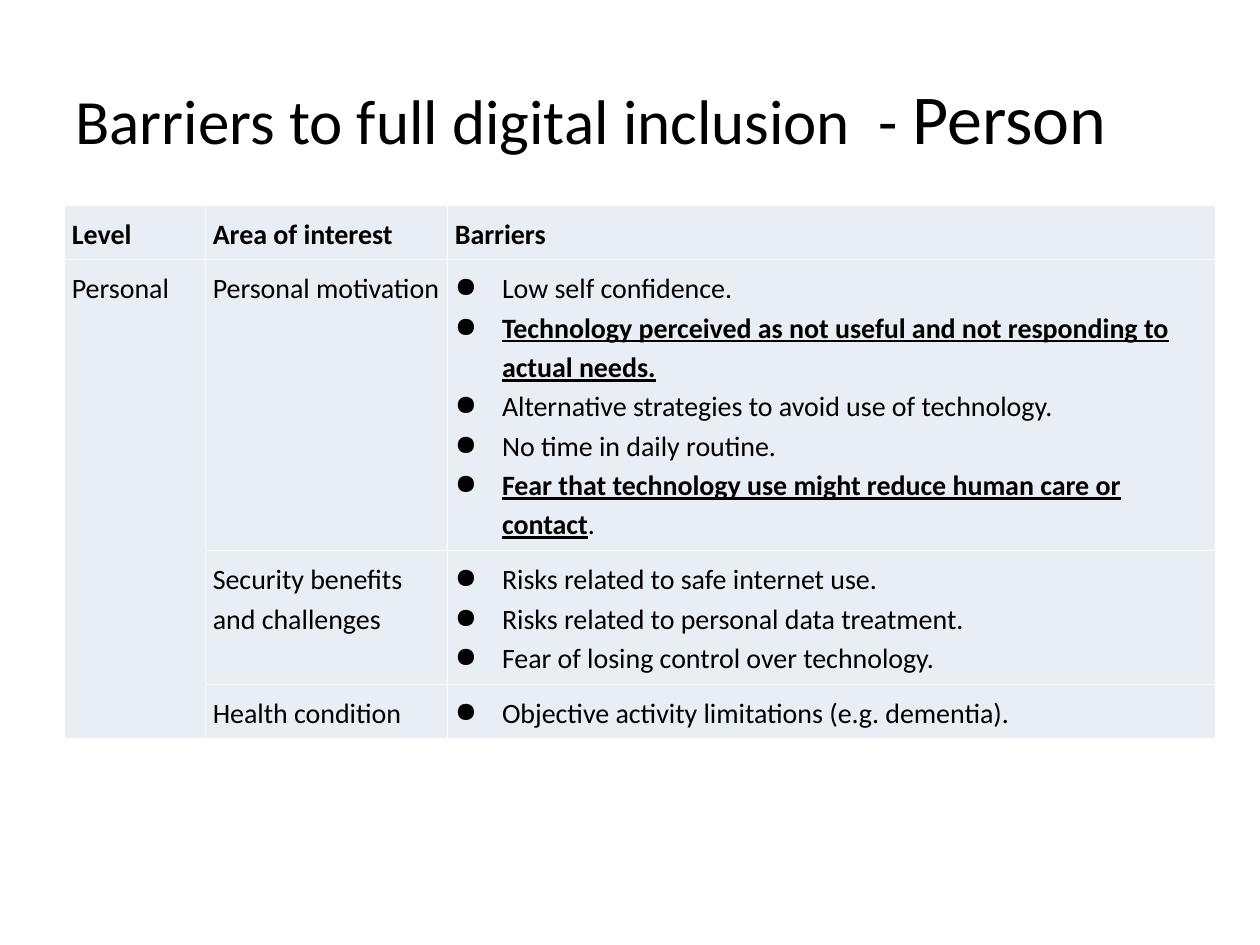
import dataclasses
import typing

import lxml.etree
import pptx
import pptx.dml.color
import pptx.enum.text
import pptx.oxml.ns
import pptx.util

Cm = pptx.util.Cm
qn = pptx.oxml.ns.qn
INK, PALE, WHITE = "000000", "E9EDF4", "FFFFFF"


@dataclasses.dataclass
class Item:
    text: str
    strong: bool = False
    tail: str = ""


@dataclasses.dataclass
class Row:
    high: float
    level: str
    area: str
    items: typing.List[Item]


ROWS = [
    Row(1.1, "Level", "Area of interest", [Item("Barriers")]),
    Row(5.87, "Personal", "Personal motivation", [
        Item("Low self confidence."),
        Item("Technology perceived as not useful and not responding to actual needs.", True),
        Item("Alternative strategies to avoid use of technology."),
        Item("No time in daily routine."),
        Item("Fear that technology use might reduce human care or contact", True, "."),
    ]),
    Row(2.7, "", "Security benefits and challenges", [
        Item("Risks related to safe internet use."),
        Item("Risks related to personal data treatment."),
        Item("Fear of losing control over technology."),
    ]),
    Row(1.1, "", "Health condition", [Item("Objective activity limitations (e.g. dementia).")]),
]
WIDTHS = [2.84, 4.88, 15.49]


def tint(code: str) -> pptx.dml.color.RGBColor:
    return pptx.dml.color.RGBColor.from_string(code)


def style(run, size: float, bold: bool = False, under: bool = False) -> None:
    font = run.font
    font.name = "Calibri"
    font.size = pptx.util.Pt(size)
    font.bold = bold
    font.underline = under
    font.color.rgb = tint(INK)


def bullet(para) -> None:
    props = para._p.get_or_add_pPr()
    props.set("marL", str(Cm(0.95)))
    props.set("indent", str(-Cm(0.95)))
    lxml.etree.SubElement(props, qn("a:buChar")).set("char", "●")


def border(cell) -> None:
    props = cell._tc.get_or_add_tcPr()
    for spot, side in enumerate(("lnL", "lnR", "lnT", "lnB")):
        line = lxml.etree.Element(qn("a:" + side), w=str(pptx.util.Pt(1)))
        fill = lxml.etree.SubElement(line, qn("a:solidFill"))
        lxml.etree.SubElement(fill, qn("a:srgbClr")).set("val", WHITE)
        props.insert(spot, line)


def write(cell, items: typing.List[Item], head: bool, dots: bool) -> None:
    cell.margin_left = cell.margin_right = Cm(0.15)
    cell.margin_top = cell.margin_bottom = Cm(0.15)
    cell.fill.solid()
    cell.fill.fore_color.rgb = tint(PALE)
    border(cell)
    cell.text_frame.text = "\n".join(item.text for item in items)
    for para, item in zip(cell.text_frame.paragraphs, items):
        if dots:
            bullet(para)
        para.line_spacing = 1.15
        for run in para.runs:
            style(run, 16, head or item.strong, item.strong)
        if item.tail:
            tail = para.add_run()
            tail.text = item.tail
            style(tail, 16)


def title(slide) -> None:
    box = slide.shapes.add_textbox(Cm(1.27), Cm(0.76), Cm(22.86), Cm(3.18))
    frame = box.text_frame
    frame.word_wrap = True
    frame.vertical_anchor = pptx.enum.text.MSO_ANCHOR.MIDDLE
    frame.text = "Barriers to full digital inclusion  - "
    para = frame.paragraphs[0]
    para.add_run().text = "Person"
    for run, size in zip(para.runs, (36, 40)):
        style(run, size)


def grid(slide) -> None:
    high = sum(row.high for row in ROWS)
    table = slide.shapes.add_table(
        len(ROWS), len(WIDTHS), Cm(1.3), Cm(4.13), Cm(sum(WIDTHS)), Cm(high)).table
    table.horz_banding = False
    for col, wide in zip(table.columns, WIDTHS):
        col.width = Cm(wide)
    for r, row in enumerate(ROWS):
        table.rows[r].height = Cm(row.high)
        cells = [[Item(row.level)], [Item(row.area)], row.items]
        for c, items in enumerate(cells):
            write(table.cell(r, c), items, r == 0, r > 0 and c == 2)
    table.cell(1, 0).merge(table.cell(3, 0))


def main() -> None:
    deck = pptx.Presentation()
    deck.slide_width, deck.slide_height = Cm(25.4), Cm(19.05)
    slide = deck.slides.add_slide(deck.slide_layouts[6])
    title(slide)
    grid(slide)
    deck.save("out.pptx")


if __name__ == "__main__":
    main()
